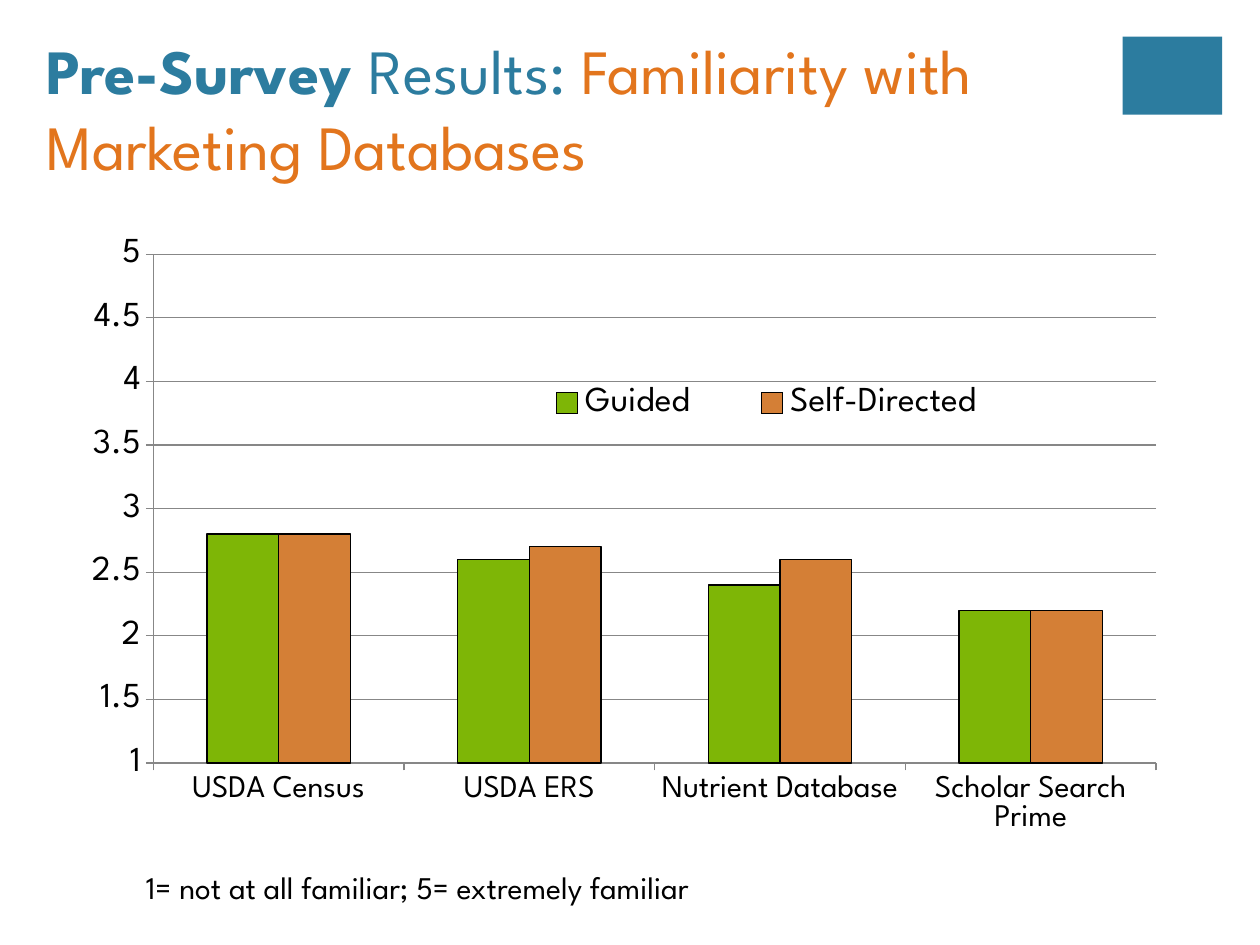
import pptx
import pptx.util
import pptx.chart.data
import pptx.dml.color
import pptx.enum.chart
import pptx.enum.shapes
import pptx.enum.text
import pptx.oxml
import pptx.oxml.ns

Inches, Pt = pptx.util.Inches, pptx.util.Pt
RGBColor = pptx.dml.color.RGBColor

FONT = "League Spartan"
TEAL = RGBColor(0x2C, 0x7C, 0x9F)
ORANGE = RGBColor(0xE2, 0x75, 0x1D)
BLACK = RGBColor(0, 0, 0)
GREY = RGBColor(0x87, 0x87, 0x87)

CATEGORIES = ["USDA Census", "USDA ERS", "Nutrient Database", "Scholar Search Prime"]
GROUPS = [
    ("Guided", [2.8, 2.6, 2.4, 2.2], RGBColor(0x7E, 0xB6, 0x06)),
    ("Self-Directed", [2.8, 2.7, 2.6, 2.2], RGBColor(0xD4, 0x7F, 0x36)),
]


def style_font(font, size, color=BLACK, bold=False):
    font.name = FONT
    font.size = Pt(size)
    font.bold = bold
    font.color.rgb = color


def add_run(paragraph, text, size, color=BLACK, bold=False):
    run = paragraph.add_run()
    run.text = text
    style_font(run.font, size, color, bold)


def add_corner_block(slide):
    block = slide.shapes.add_shape(
        pptx.enum.shapes.MSO_SHAPE.RECTANGLE,
        Inches(8.91), Inches(0.29), Inches(0.79), Inches(0.62))
    block.shadow.inherit = False
    block.fill.solid()
    block.fill.fore_color.rgb = TEAL
    block.line.fill.background()


def fill_title(slide):
    title = slide.shapes.title
    title.left, title.top = Inches(0.27), Inches(0.25)
    title.width, title.height = Inches(9.11), Inches(1.25)
    frame = title.text_frame
    frame.auto_size = pptx.enum.text.MSO_AUTO_SIZE.NONE
    frame.vertical_anchor = pptx.enum.text.MSO_ANCHOR.BOTTOM
    heading = frame.paragraphs[0]
    heading.alignment = pptx.enum.text.PP_ALIGN.LEFT
    add_run(heading, "Pre-Survey ", 36, TEAL, bold=True)
    add_run(heading, "Results: ", 36, TEAL)
    add_run(heading, "Familiarity with Marketing Databases", 36, ORANGE)


def place_manually(element, index, x, y, w, h, inner=False):
    """Give a plot area or legend a fixed place, as fractions of the chart."""
    for old_layout in element.findall(pptx.oxml.ns.qn("c:layout")):
        element.remove(old_layout)
    target = '<c:layoutTarget val="inner"/>' if inner else ""
    sizes = "".join(f'<c:{tag} val="{value}"/>'
                    for tag, value in zip("xywh", (x, y, w, h)))
    element.insert(index, pptx.oxml.parse_xml(
        f'<c:layout {pptx.oxml.ns.nsdecls("c")}><c:manualLayout>{target}'
        '<c:xMode val="edge"/><c:yMode val="edge"/>'
        f'{sizes}</c:manualLayout></c:layout>'))


def style_axis(axis, size):
    axis.major_tick_mark = pptx.enum.chart.XL_TICK_MARK.OUTSIDE
    axis.minor_tick_mark = pptx.enum.chart.XL_TICK_MARK.NONE
    axis.format.line.color.rgb = GREY
    axis.format.line.width = Pt(0.75)
    style_font(axis.tick_labels.font, size)


def add_familiarity_chart(slide):
    ratings = pptx.chart.data.CategoryChartData()
    ratings.categories = CATEGORIES
    for name, values, _ in GROUPS:
        ratings.add_series(name, values)
    chart = slide.shapes.add_chart(
        pptx.enum.chart.XL_CHART_TYPE.COLUMN_CLUSTERED,
        Inches(0.22), Inches(1.24), Inches(9.31), Inches(5.6), ratings).chart
    chart.has_title = False
    style_font(chart.font, 10)

    # Bars
    plot = chart.plots[0]
    plot.gap_width = 150
    plot.overlap = 0
    plot.vary_by_categories = False
    for bars, (_, _, color) in zip(plot.series, GROUPS):
        bars.format.fill.solid()
        bars.format.fill.fore_color.rgb = color
        bars.format.line.color.rgb = BLACK
        bars.format.line.width = Pt(0.75)

    # Axes
    style_axis(chart.category_axis, 18)
    scale = chart.value_axis
    style_axis(scale, 20)
    scale.minimum_scale, scale.maximum_scale, scale.major_unit = 1, 5, 0.5
    scale.tick_labels.number_format = "General"
    scale.tick_labels.number_format_is_linked = False
    scale.has_major_gridlines = True
    scale.major_gridlines.format.line.color.rgb = GREY
    scale.major_gridlines.format.line.width = Pt(0.75)

    # Legend, laid over the plot
    chart.has_legend = True
    legend = chart.legend
    legend.position = pptx.enum.chart.XL_LEGEND_POSITION.RIGHT
    legend.include_in_layout = False
    style_font(legend.font, 20)
    plot_area = chart.element.find(".//" + pptx.oxml.ns.qn("c:plotArea"))
    legend_box = chart.element.find(".//" + pptx.oxml.ns.qn("c:legend"))
    place_manually(plot_area, 0, 0.107, 0.139, 0.855, 0.721, inner=True)
    place_manually(legend_box, 1, 0.4, 0.31, 0.46, 0.08)


def add_scale_note(slide):
    note = slide.shapes.add_textbox(
        Inches(1.06), Inches(6.84), Inches(6.32), Inches(0.4))
    frame = note.text_frame
    frame.word_wrap = True
    frame.auto_size = pptx.enum.text.MSO_AUTO_SIZE.SHAPE_TO_FIT_TEXT
    add_run(frame.paragraphs[0], "1= not at all familiar; 5= extremely familiar", 18)


def main():
    deck = pptx.Presentation()
    deck.slide_width, deck.slide_height = Inches(10), Inches(7.5)
    slide = deck.slides.add_slide(deck.slide_layouts.get_by_name("Title Only"))
    add_corner_block(slide)
    fill_title(slide)
    add_familiarity_chart(slide)
    add_scale_note(slide)
    deck.save("out.pptx")


if __name__ == "__main__":
    main()
